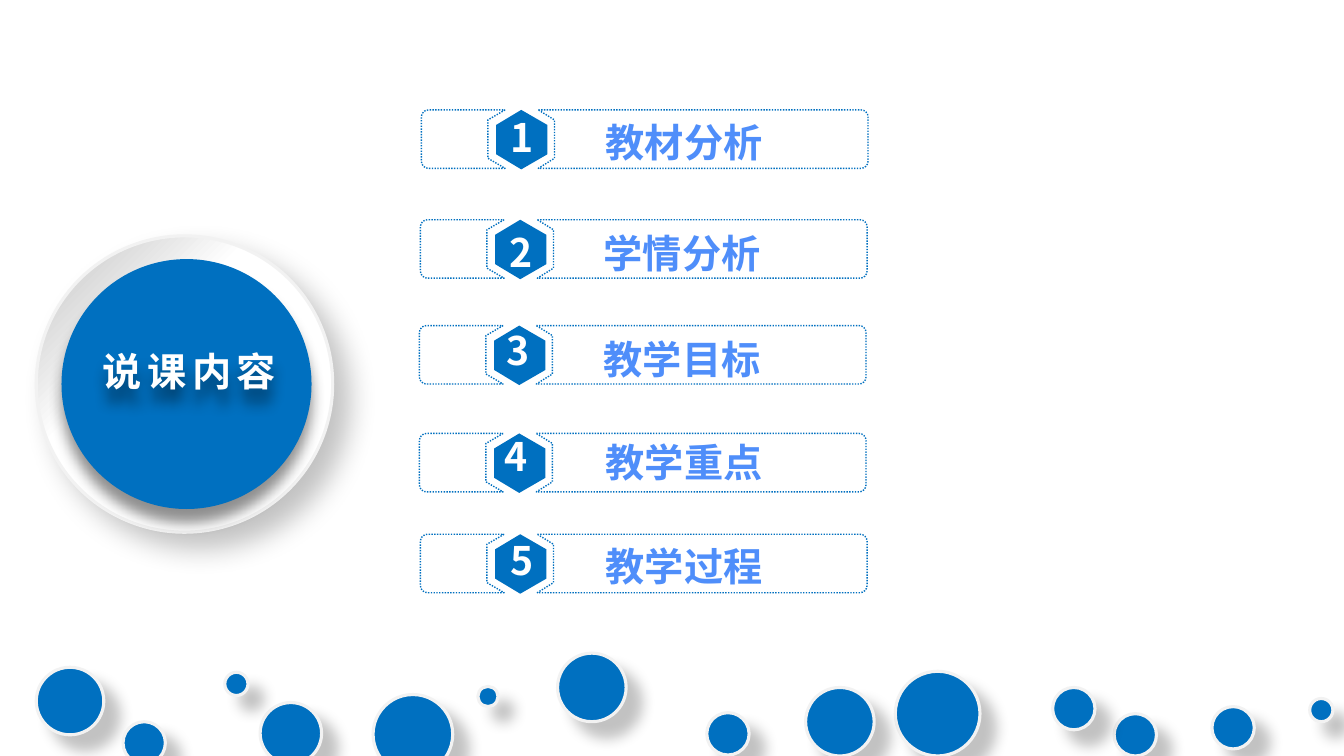
import math

from lxml import etree
from pptx import Presentation
from pptx.dml.color import RGBColor
from pptx.enum.dml import MSO_LINE
from pptx.enum.shapes import MSO_SHAPE
from pptx.enum.text import MSO_AUTO_SIZE
from pptx.oxml.ns import qn
from pptx.util import Pt

PX = 9144
OVAL = MSO_SHAPE.OVAL
DOTTED = MSO_LINE.ROUND_DOT
GROW = MSO_AUTO_SIZE.SHAPE_TO_FIT_TEXT

BLUE = RGBColor(0x00, 0x70, 0xC0)
SKY = RGBColor(0x4F, 0x8E, 0xFA)
WHITE = RGBColor(0xFF, 0xFF, 0xFF)
PALE = RGBColor(0xF2, 0xF2, 0xF2)
GREY = RGBColor(0xBF, 0xBF, 0xBF)

LATIN_FONT = "Arial"
HEITI_FONT = "Noto Sans CJK SC"

BUBBLES = [
    (258, 697, 61), (553, 648, 68), (888, 666, 84), (701, 707, 42),
    (36, 662, 67), (370, 689, 79), (799, 682, 68), (223, 667, 23),
    (122, 716, 42), (1105, 708, 42), (474, 681, 20), (1299, 693, 23),
    (1044, 682, 42), (1202, 701, 42),
]

# frame left, frame top, number left, number top, topic left, topic top
TOPICS = [
    ("教材分析", 418, 109, 496, 108, 591, 112),
    ("学情分析", 417, 218, 495, 222, 589, 223),
    ("教学目标", 416, 323, 493, 319, 589, 328),
    ("教学重点", 416, 430, 491, 424, 591, 430),
    ("教学过程", 417, 530, 496, 527, 591, 533),
]

FRAME_WIDTH, FRAME_HEIGHT, CORNER = 443, 58, 7
BADGE_LEFT = 74
BADGE = [(25, 0), (51, 15), (51, 44), (25, 59), (0, 44), (0, 15)]


def add_shadow(shape, opacity, blur, distance, angle):
    shape.shadow.inherit = False
    effects = shape._element.spPr.find(qn("a:effectLst"))
    shadow = etree.SubElement(
        effects, qn("a:outerShdw"), blurRad=str(Pt(blur)), dist=str(Pt(distance)),
        dir=str(angle * 60000), algn="ctr", rotWithShape="0")
    color = etree.SubElement(shadow, qn("a:srgbClr"), val="000000")
    etree.SubElement(color, qn("a:alpha"), val=str(opacity * 1000))


def add_circle(page, left, top, size, shadow, outlined=True):
    circle = page.shapes.add_shape(OVAL, left * PX, top * PX, size * PX, size * PX)
    circle.fill.solid()
    circle.fill.fore_color.rgb = BLUE
    if outlined:
        circle.line.color.rgb = PALE
        circle.line.width = Pt(2.25)
    else:
        circle.line.fill.background()
    add_shadow(circle, *shadow)
    return circle


def add_text(shapes, text, left, top, width, color, font=HEITI_FONT, wrap=True, spacing=0):
    box = shapes.add_textbox(left * PX, top * PX, width * PX, 57 * PX)
    box.text_frame.word_wrap = wrap
    box.text_frame.auto_size = GROW
    para = box.text_frame.paragraphs[0]
    para.text = text
    para.font.size = Pt(28)
    para.font.bold = True
    para.font.color.rgb = color
    para.font.name = font
    properties = para._p.pPr.find(qn("a:defRPr"))
    etree.SubElement(properties, qn("a:ea"), typeface=HEITI_FONT)
    if spacing:
        properties.set("spc", str(spacing * 100))
    return box


def add_outline(shapes, left, top, contours):
    placed = [[((left + x) * PX, (top + y) * PX) for x, y in points] for points in contours]
    builder = shapes.build_freeform(*placed[0][0])
    builder.add_line_segments(placed[0][1:], close=True)
    for points in placed[1:]:
        builder.move_to(*points[0])
        builder.add_line_segments(points[1:], close=True)
    outline = builder.convert_to_shape()
    outline.shadow.inherit = False
    return outline


def corner_arc(x, y, start):
    angles = [math.radians(start + step * 22.5) for step in range(5)]
    return [(x + CORNER * math.cos(a), y + CORNER * math.sin(a)) for a in angles]


def frame_contours():
    right, bottom = FRAME_WIDTH - CORNER, FRAME_HEIGHT - CORNER
    left_part = [(83, 0), (66, 10), (66, 48), (83, FRAME_HEIGHT)]
    left_part += corner_arc(CORNER, bottom, 90) + corner_arc(CORNER, CORNER, 180)
    right_part = [(116, 0)] + corner_arc(right, CORNER, -90) + corner_arc(right, bottom, 0)
    right_part += [(116, FRAME_HEIGHT), (132, 48), (132, 10)]
    return [left_part, right_part]


def add_topic(page, number, topic):
    label, left, top, number_left, number_top, label_left, label_top = topic
    group = page.shapes.add_group_shape()
    frame = add_outline(group.shapes, left, top, frame_contours())
    frame.fill.background()
    frame.line.color.rgb = BLUE
    frame.line.width = Pt(1)
    frame.line.dash_style = DOTTED
    badge = add_outline(group.shapes, left + BADGE_LEFT, top, [BADGE])
    badge.fill.solid()
    badge.fill.fore_color.rgb = BLUE
    badge.line.fill.background()
    add_text(group.shapes, str(number), number_left, number_top, 61, WHITE)
    add_text(page.shapes, label, label_left, label_top, 235, SKY)


def add_medallion(page):
    rim = add_circle(page, 36, 234, 294, (23, 20, 15, 45))
    rim.fill.gradient()
    rim.fill.gradient_angle = 315
    for stop, color, position in zip(rim.fill.gradient_stops, (GREY, WHITE), (0, 0.37)):
        stop.color.rgb = color
        stop.position = position
    add_circle(page, 61, 257, 248, (43, 10, 10, 90), outlined=False)
    title = add_text(page.shapes, "说课内容", 92, 340, 200, WHITE, LATIN_FONT,
                     wrap=False, spacing=4)
    add_shadow(title, 43, 10, 10, 90)


def main():
    deck = Presentation()
    deck.slide_width = 1333 * PX
    deck.slide_height = 750 * PX
    page = deck.slides.add_slide(deck.slide_layouts[6])
    for left, top, size in BUBBLES:
        add_circle(page, left, top, size, (23, 10, 15, 45))
    add_medallion(page)
    for number, topic in enumerate(TOPICS, 1):
        add_topic(page, number, topic)
    deck.save("out.pptx")


if __name__ == "__main__":
    main()
